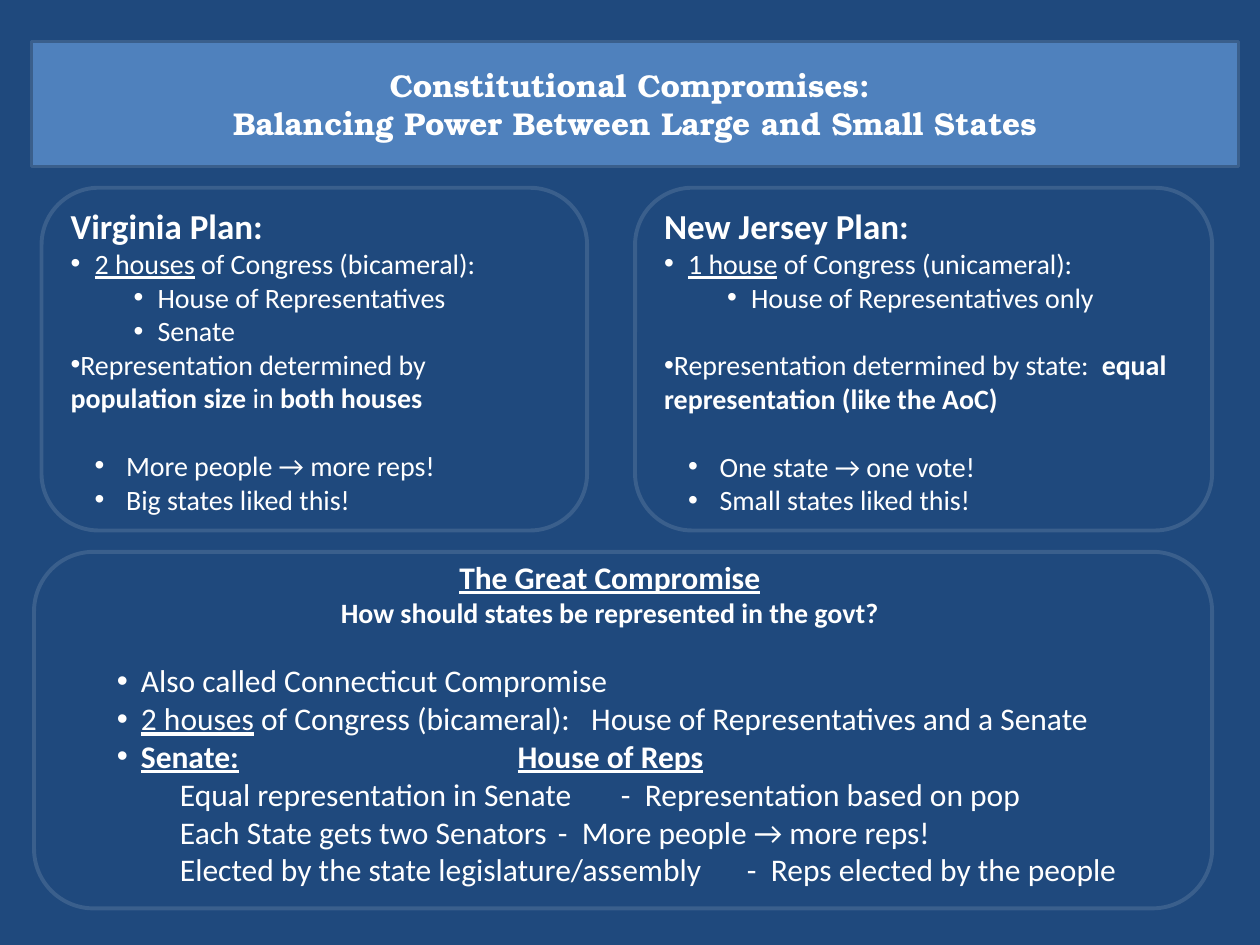
from lxml.etree import SubElement
from pptx import Presentation
from pptx.dml.color import RGBColor
from pptx.enum.shapes import MSO_SHAPE
from pptx.enum.text import MSO_ANCHOR, PP_ALIGN
from pptx.oxml.ns import qn
from pptx.util import Inches, Pt

BLANK_LINE = 19.5  # height in points of one 16 pt line


def color(hex_text):
    return RGBColor.from_string(hex_text)


def text(words, **form):
    """One run of text: size, bold and underline are optional."""
    return {"words": words, **form}


def line(*runs, **form):
    """One paragraph: margin, indent, bullet, align, before, tabs, level."""
    return {"runs": runs, **form}


class SlideBuilder:
    background, banner, border, ink = "1F497D", "4F81BD", "3A5F8C", "FFFFFF"
    body_font, title_font = "Calibri", "TeX Gyre Bonum"

    def __init__(self, deck):
        self.page = deck.slides.add_slide(deck.slide_layouts[6])
        fill = self.page.background.fill
        fill.solid()
        fill.fore_color.rgb = color(self.background)

    def panel(self, kind, place, width=2.25, fill=None):
        box = self.page.shapes.add_shape(kind, *map(Inches, place))
        box.shadow.inherit = False
        if fill:
            box.fill.solid()
            box.fill.fore_color.rgb = color(fill)
        else:
            box.fill.background()
        box.line.color.rgb = color(self.border)
        box.line.width = Pt(width)
        return box

    def text_box(self, place, lines, size, wrap=True):
        box = self.page.shapes.add_textbox(*map(Inches, place))
        box.text_frame.word_wrap = wrap
        self.fill_text(box.text_frame, lines, size)

    def plan(self, place, lines):
        frame = self.panel(MSO_SHAPE.ROUNDED_RECTANGLE, place).text_frame
        frame.margin_top = frame.margin_bottom = 0
        frame.vertical_anchor = MSO_ANCHOR.TOP
        self.fill_text(frame, lines, 16)

    def fill_text(self, frame, lines, size, font=None):
        for number, form in enumerate(lines):
            para = frame.paragraphs[0] if number == 0 else frame.add_paragraph()
            para.alignment = form.get("align", PP_ALIGN.LEFT)
            para.level = form.get("level", 0)
            para.space_before = Pt(form.get("before", 0))
            self.indent(para, form)
            for part in form["runs"]:
                span = para.add_run()
                span.text = part["words"]
                span.font.name = font or self.body_font
                span.font.size = Pt(part.get("size", size))
                span.font.bold = part.get("bold", False)
                span.font.underline = part.get("underline", False)
                span.font.color.rgb = color(self.ink)

    def indent(self, para, form):
        props = para._p.get_or_add_pPr()
        props.set("marL", str(Inches(form.get("margin", 0))))
        props.set("indent", str(Inches(form.get("indent", 0))))
        if form.get("bullet"):
            SubElement(props, qn("a:buFont"), typeface="Arial")
            SubElement(props, qn("a:buChar"), char="•")
        else:
            SubElement(props, qn("a:buNone"))
        if form.get("tabs"):
            stops = SubElement(props, qn("a:tabLst"))
            for stop in form["tabs"]:
                SubElement(stops, qn("a:tab"), pos=str(Inches(stop)), algn="l")


def bullet(*runs, margin=0.19, indent=-0.19, **form):
    return line(*runs, margin=margin, indent=indent, bullet=True, **form)


def plan_lines(name, houses, chambers, representation, gap, results):
    """The common outline of the two rival plans."""
    return [
        line(text(name, size=20, bold=True)),
        bullet(text(houses[0], underline=True), text(houses[1])),
        *[bullet(text(chamber), margin=0.69, level=1) for chamber in chambers],
        bullet(*representation, margin=0, indent=-0.32, before=gap),
        *[bullet(text(result), margin=0.44, indent=-0.25, level=1,
                 before=0 if number else BLANK_LINE)
          for number, result in enumerate(results)],
    ]


def main():
    deck = Presentation()
    deck.slide_width, deck.slide_height = Inches(10), Inches(7.5)
    slide = SlideBuilder(deck)
    center = PP_ALIGN.CENTER

    # Title banner
    banner = slide.panel(MSO_SHAPE.RECTANGLE, (0.25, 0.33, 9.58, 0.99), 2, slide.banner)
    banner.text_frame.vertical_anchor = MSO_ANCHOR.MIDDLE
    titles = ("Constitutional Compromises: ",
              "Balancing Power Between Large and Small States")
    slide.fill_text(banner.text_frame,
                    [line(text(title, bold=True), align=center) for title in titles],
                    18, slide.title_font)

    # The two plans
    slide.plan((0.33, 1.49, 4.33, 2.72), plan_lines(
        "Virginia Plan:", ("2 houses", " of Congress (bicameral):"),
        ("House of Representatives", "Senate"),
        (text("Representation determined by "), text("population size ", bold=True),
         text("in "), text("both houses", bold=True)),
        0, ("More people → more reps!", "Big states liked this!")))
    slide.plan((5.04, 1.49, 4.58, 2.72), plan_lines(
        "New Jersey Plan:", ("1 house", " of Congress (unicameral):"),
        ("House of Representatives only",),
        (text("Representation determined by state:  "),
         text("equal representation (like the AoC)", bold=True)),
        BLANK_LINE, ("One state → one vote!", "Small states liked this!")))

    # The compromise
    slide.panel(MSO_SHAPE.ROUNDED_RECTANGLE, (0.27, 4.38, 9.35, 2.83))
    slide.text_box((2.58, 4.38, 4.52, 0.77), [
        line(text("The Great Compromise", size=18, bold=True, underline=True), align=center),
        line(text("How should states be represented in the govt?", bold=True), align=center),
    ], 16, wrap=False)
    comparisons = (
        ("Equal representation in Senate", "Representation based on pop", 4),
        ("Each State gets two Senators", "More people → more reps!", 4),
        ("Elected by the state legislature/assembly", "Reps elected by the people", 4.5),
    )
    slide.text_box((0.83, 5.2, 8.79, 2.22), [
        bullet(text("Also called Connecticut Compromise")),
        bullet(text("2 houses", underline=True),
               text(" of Congress (bicameral):   House of Representatives and a Senate")),
        bullet(text("Senate:", bold=True, underline=True), text("\t"),
               text("House of Reps", bold=True, underline=True), tabs=[3.18]),
        *[line(text(f"\t{senate}\t-  {house}"), tabs=[0.23, stop])
          for senate, house, stop in comparisons],
    ], 18)

    deck.save("out.pptx")


if __name__ == "__main__":
    main()
